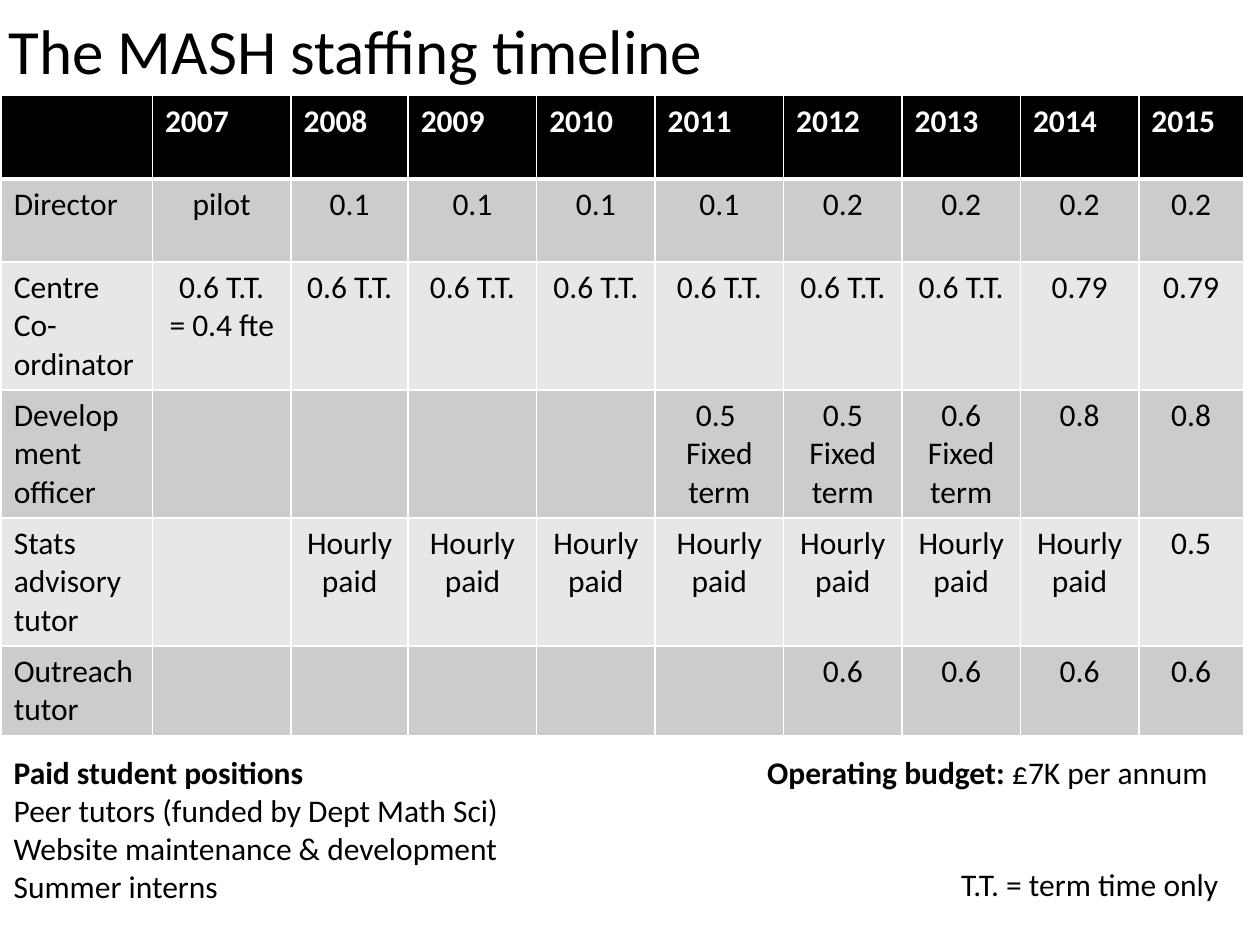
"""Build the MASH staffing timeline slide."""
from typing import NamedTuple

from lxml import etree
from pptx import Presentation
from pptx import util as u
from pptx.dml.color import RGBColor
from pptx.enum import text as t
from pptx.oxml import ns

BLACK = RGBColor(0x00, 0x00, 0x00)
WHITE = RGBColor(0xFF, 0xFF, 0xFF)
DARK = RGBColor(0xCC, 0xCC, 0xCC)
LIGHT = RGBColor(0xE7, 0xE7, 0xE7)

BODY = {"name": "Calibri", "size": u.Pt(18), "bold": False}
HEAD = BODY | {"bold": True}
TITLE = BODY | {"size": u.Pt(36)}

WIDTHS = [1.2, 1.1, 0.93, 1.02, 0.94, 1.02, 0.94, 0.94, 0.94, 0.83]
HEIGHT = 0.66
TERM = "0.6 T.T."
ROWS = [
    [""] + [str(year) for year in range(2007, 2016)],
    ["Director", "pilot"] + ["0.1"] * 4 + ["0.2"] * 4,
    ["Centre Co-ordinator", TERM + "\n= 0.4 fte"] + [TERM] * 6 + ["0.79"] * 2,
    ["Development officer"] + [""] * 4
    + [f"{part}\nFixed term" for part in ("0.5 ", "0.5", "0.6")] + ["0.8"] * 2,
    ["Stats advisory tutor", ""] + ["Hourly paid"] * 7 + ["0.5"],
    ["Outreach tutor"] + [""] * 5 + ["0.6"] * 4,
]


class Run(NamedTuple):
    """A piece of text with its font values."""
    words: str
    font: dict


class Note(NamedTuple):
    """A text box holding one list of runs per line."""
    left: float
    top: float
    width: float
    height: float
    lines: list[list[Run]]
    wrap: bool = False


NOTES = [
    Note(-0.03, 0.01, 9, 0.77, [[Run("The MASH staffing timeline", TITLE)]], True),
    Note(5.99, 5.93, 3.82, 0.4,
         [[Run("Operating budget: ", HEAD), Run("£7K per annum", BODY)]]),
    Note(7.53, 6.82, 2.27, 0.4, [[Run("T.T. = term time only", BODY)]]),
    Note(0.01, 5.93, 4.09, 1.31, [
        [Run("Paid student positions", HEAD)],
        [Run("Peer tutors (funded by Dept Math Sci)", BODY)],
        [Run("Website maintenance & development", BODY)],
        [Run("Summer interns", BODY)],
    ]),
]


def style(font, values: dict, color: RGBColor) -> None:
    """Set font attributes and colour."""
    for key, value in values.items():
        setattr(font, key, value)
    font.color.rgb = color


def edge(cell, top: float, base: float) -> None:
    """Give a cell white borders, with top and base widths in points."""
    props = cell._tc.get_or_add_tcPr()
    sides = {"lnL": 1, "lnR": 1, "lnT": top, "lnB": base}
    for spot, (tag, width) in enumerate(sides.items()):
        line = etree.Element(ns.qn(f"a:{tag}"), w=str(u.Pt(width)))
        fill = etree.SubElement(line, ns.qn("a:solidFill"))
        etree.SubElement(fill, ns.qn("a:srgbClr"), val=str(WHITE))
        props.insert(spot, line)


def add_note(slide, note: Note) -> None:
    """Draw a text box."""
    box = slide.shapes.add_textbox(*(u.Inches(size) for size in note[:4]))
    frame = box.text_frame
    frame.word_wrap = note.wrap
    if note.wrap:
        frame.vertical_anchor = t.MSO_ANCHOR.MIDDLE
    else:
        frame.auto_size = t.MSO_AUTO_SIZE.SHAPE_TO_FIT_TEXT
    for spot, line in enumerate(note.lines):
        para = frame.add_paragraph() if spot else frame.paragraphs[0]
        for part in line:
            run = para.add_run()
            run.text = part.words
            style(run.font, part.font, BLACK)


def add_grid(slide) -> None:
    """Draw the staffing table."""
    frame = slide.shapes.add_table(
        len(ROWS), len(WIDTHS), u.Inches(0.01), u.Inches(0.76),
        u.Inches(sum(WIDTHS)), u.Inches(HEIGHT * len(ROWS)))
    grid = frame.table
    for col, width in zip(grid.columns, WIDTHS):
        col.width = u.Inches(width)
    for r, row in enumerate(ROWS):
        grid.rows[r].height = u.Inches(HEIGHT)
        shade = (DARK if r % 2 else LIGHT) if r else BLACK
        for c, words in enumerate(row):
            cell = grid.cell(r, c)
            cell.text = words
            cell.fill.solid()
            cell.fill.fore_color.rgb = shade
            edge(cell, 3 if r == 1 else 1, 1 if r else 3)
            for para in cell.text_frame.paragraphs:
                if r and c:
                    para.alignment = t.PP_ALIGN.CENTER
                style(para.font, BODY if r else HEAD, BLACK if r else WHITE)
                for run in para.runs:
                    style(run.font, BODY if r else HEAD, BLACK if r else WHITE)


def main() -> None:
    """Build and save the slide."""
    deck = Presentation()
    deck.slide_width, deck.slide_height = u.Inches(10), u.Inches(7.5)
    slide = deck.slides.add_slide(deck.slide_layouts[6])
    add_grid(slide)
    for note in NOTES:
        add_note(slide, note)
    deck.save("out.pptx")


if __name__ == "__main__":
    main()
